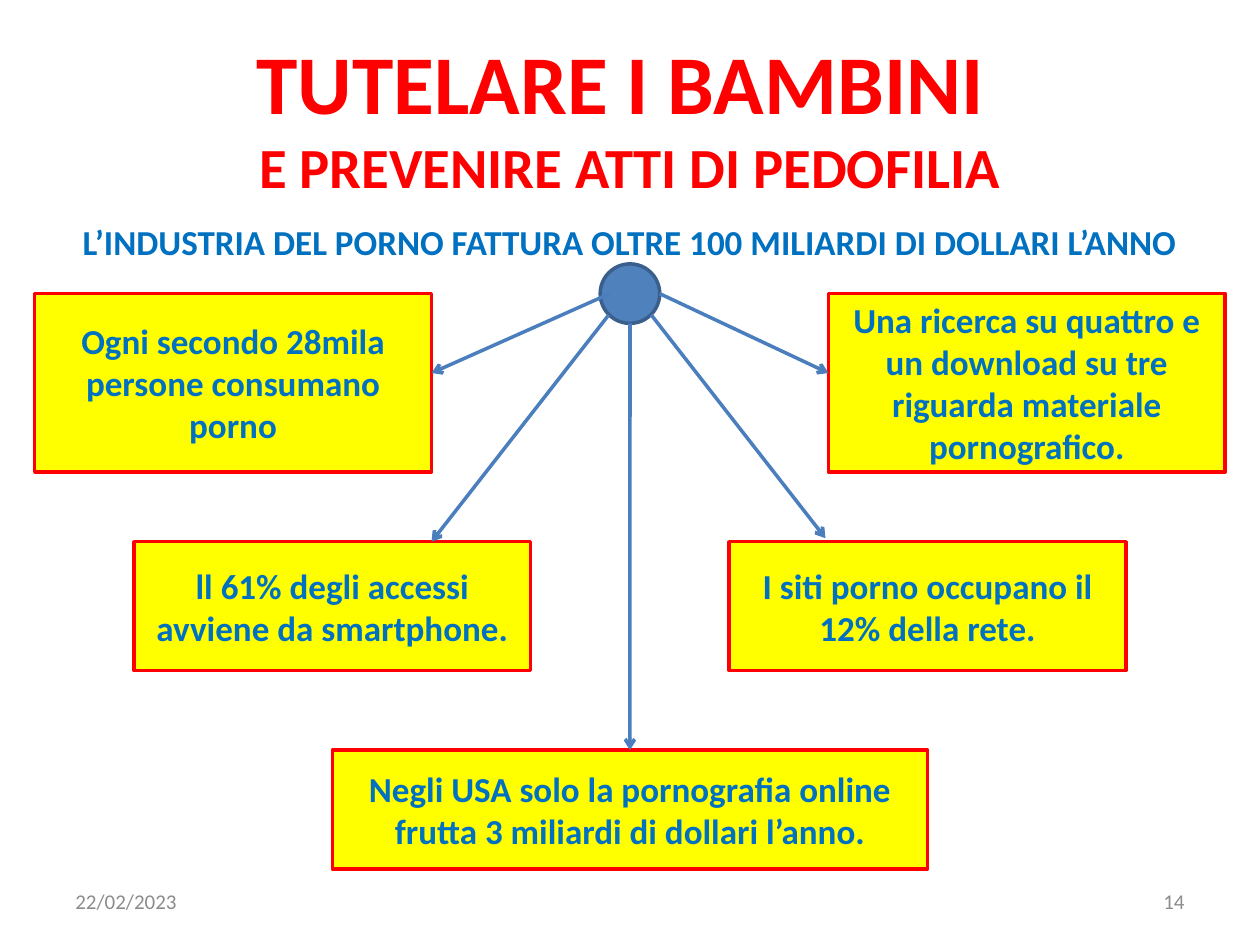
from lxml import etree
from pptx import Presentation
from pptx import util as u
from pptx.dml.color import RGBColor
from pptx.enum import shapes, text
from pptx.oxml.ns import qn

WIDTH, HEIGHT = 25.4, 19.05
RED, BLUE, YELLOW, GREY = "FF0000", "0070C0", "FFFF00", "8C8C8C"
CENTER, LEFT, RIGHT = text.PP_ALIGN.CENTER, text.PP_ALIGN.LEFT, text.PP_ALIGN.RIGHT


def rgb(value):
    return RGBColor.from_string(value)


class Deck:
    font = "Calibri"
    line_width = u.Pt(2)

    def __init__(self):
        self.prs = Presentation()
        self.prs.slide_width, self.prs.slide_height = u.Cm(WIDTH), u.Cm(HEIGHT)
        self.s = self.prs.slides.add_slide(self.prs.slide_layouts[5])

    def style_run(self, r, size, color, bold=True):
        f = r.font
        f.name, f.size, f.bold = self.font, u.Pt(size), bold
        f.color.rgb = rgb(color)

    def set_text(self, sp, content, sizes, color, align=CENTER, bold=True,
                 anchor=text.MSO_ANCHOR.MIDDLE):
        """Fill a shape with one paragraph; sizes holds one size per line."""
        tf = sp.text_frame
        tf.word_wrap = True
        tf.vertical_anchor = anchor
        p = tf.paragraphs[0]
        p.text = content
        p.alignment = align
        for r, size in zip(p.runs, sizes):
            self.style_run(r, size, color, bold)

    def title(self, content, sizes, left, top, width, height):
        sp = self.s.shapes.title
        sp.left, sp.top, sp.width, sp.height = map(u.Cm, (left, top, width, height))
        self.set_text(sp, content, sizes, RED)
        sp.text_frame.auto_size = text.MSO_AUTO_SIZE.NONE

    def label(self, content, left, top, width, height, size, color, **style):
        sp = self.s.shapes.add_textbox(*map(u.Cm, (left, top, width, height)))
        self.set_text(sp, content, [size], color, **style)

    def shape(self, kind, left, top, width, height, fill, line):
        sp = self.s.shapes.add_shape(kind, *map(u.Cm, (left, top, width, height)))
        sp.shadow.inherit = False
        sp.fill.solid()
        sp.fill.fore_color.rgb = rgb(fill)
        sp.line.color.rgb = rgb(line)
        sp.line.width = self.line_width
        return sp

    def box(self, content, left, top, width, height):
        sp = self.shape(shapes.MSO_SHAPE.RECTANGLE, left, top, width, height, YELLOW, RED)
        self.set_text(sp, content, [20], BLUE)
        return sp

    def arrow(self, start, end):
        c = self.s.shapes.add_connector(
            shapes.MSO_CONNECTOR.STRAIGHT, *map(u.Cm, (*start, *end)))
        c.line.color.rgb = rgb("4B7EBC")
        c.line.width = self.line_width
        props = c._element.spPr
        etree.SubElement(props.find(qn("a:ln")), qn("a:tailEnd"), type="arrow")
        etree.SubElement(props, qn("a:effectLst"))
        return c


def main():
    d = Deck()
    d.title("TUTELARE I BAMBINI \vE PREVENIRE ATTI DI PEDOFILIA", [47.7, 32.4],
            1.9, 0.53, 21.6, 3.6)
    footer = dict(top=17.65, width=5.92, height=1.02, size=12, color=GREY, bold=False)
    d.label("22/02/2023", left=1.27, align=LEFT, **footer)
    d.label("14", left=WIDTH - 1.27 - 5.92, align=RIGHT, **footer)
    d.label("L’INDUSTRIA DEL PORNO FATTURA OLTRE 100 MILIARDI DI DOLLARI L’ANNO",
            0.7, 4.32, 24, 1.96, 20, BLUE, anchor=text.MSO_ANCHOR.TOP)

    side_width, bottom_width = 8, 12
    rows = [
        (0.7, 5.92, 3.6, "Ogni secondo 28mila persone consumano porno",
         "Una ricerca su quattro e un download su tre riguarda materiale pornografico."),
        (2.7, 10.92, 2.6, "ll 61% degli accessi avviene da smartphone.",
         "I siti porno occupano il 12% della rete."),
    ]
    for margin, top, height, left_text, right_text in rows:
        d.box(left_text, margin, top, side_width, height)
        d.box(right_text, WIDTH - margin - side_width, top, side_width, height)
    middle = WIDTH / 2
    bottom = d.box("Negli USA solo la pornografia online frutta 3 miliardi di dollari l’anno.",
                   middle - bottom_width / 2, 15.12, bottom_width, 2.4)

    size, hub_top = 1.2, 5.32
    d.shape(shapes.MSO_SHAPE.OVAL, middle - size / 2, hub_top, size, size,
            "4F81BD", "3A5F8C")
    for start, end in [((12.29, 5.92), (8.7, 7.52)), ((12.27, 6.35), (8.7, 10.92)),
                       ((13.13, 6.35), (16.64, 10.85)), ((13.3, 5.92), (16.7, 7.52))]:
        d.arrow(start, end)
    d.arrow((middle, hub_top + size), (middle, 15.12)).end_connect(bottom, 0)

    d.prs.save("out.pptx")


if __name__ == "__main__":
    main()
